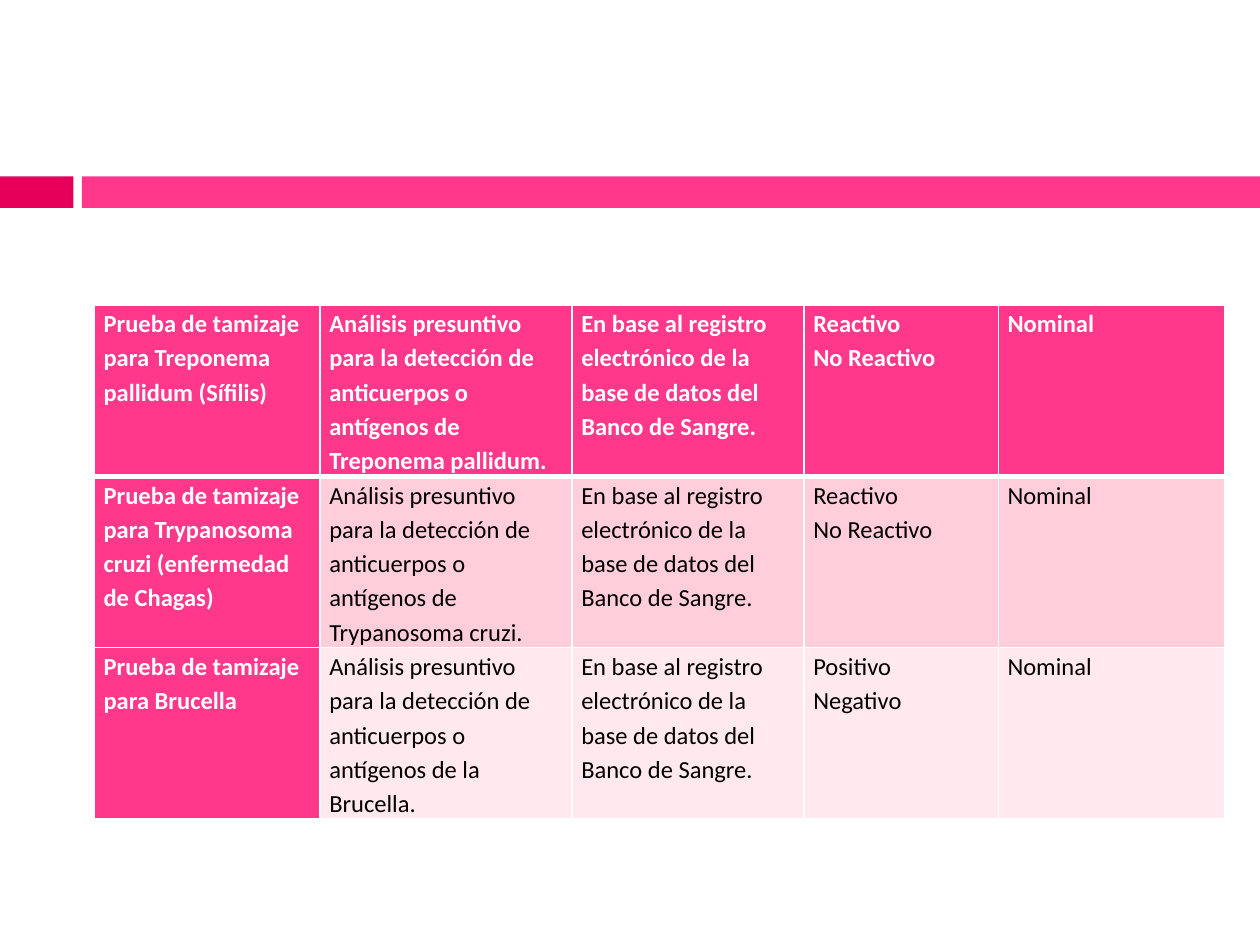
from lxml.etree import SubElement
from pptx import Presentation
from pptx.dml.color import RGBColor
from pptx.enum.shapes import MSO_SHAPE
from pptx.oxml.ns import qn
from pptx.util import Pt

CRIMSON = RGBColor(0xE4, 0x00, 0x59)
PINK = RGBColor(0xFF, 0x38, 0x8C)
PINK_MID = RGBColor(0xFF, 0xCE, 0xDA)
PINK_PALE = RGBColor(0xFF, 0xE8, 0xEE)
WHITE = RGBColor(0xFF, 0xFF, 0xFF)
BLACK = RGBColor(0x00, 0x00, 0x00)

COL_WIDTHS = [129, 144, 132.6, 111, 129.4]
ROW_HEIGHT = 82.8
BAND_FILLS = [PINK, PINK_MID, PINK_PALE]
# Test, agent as named in the analysis, possible results
TESTS = [
    ("Treponema pallidum (Sífilis)", "Treponema pallidum",
     "Reactivo\nNo Reactivo"),
    ("Trypanosoma cruzi (enfermedad de Chagas)", "Trypanosoma cruzi",
     "Reactivo\nNo Reactivo"),
    ("Brucella", "la Brucella", "Positivo\nNegativo"),
]


def add_bar(slide, left, top, width, height, color):
    sp = slide.shapes.add_shape(MSO_SHAPE.RECTANGLE, Pt(left), Pt(top),
                                Pt(width), Pt(height))
    sp.shadow.inherit = False
    sp.fill.solid()
    sp.fill.fore_color.rgb = color
    sp.line.fill.background()


def add_header_band(slide, left, top, width, height):
    tab, gap = 42, 4.8
    add_bar(slide, left, top, tab, height, CRIMSON)
    add_bar(slide, left + tab + gap, top, width - tab - gap, height, PINK)


def set_borders(cell, **widths):
    """Draw white cell borders; widths in points by side, in L, R, T, B order."""
    tc_pr = cell._tc.get_or_add_tcPr()
    for side, width in widths.items():
        ln = SubElement(tc_pr, qn(f"a:ln{side}"), w=str(Pt(width)))
        fill = SubElement(ln, qn("a:solidFill"))
        SubElement(fill, qn("a:srgbClr"), val=str(WHITE))


def fill_cell(cell, text, fill, color, bold):
    cell.fill.solid()
    cell.fill.fore_color.rgb = fill
    cell.margin_left = cell.margin_right = Pt(5.2)
    cell.margin_top = cell.margin_bottom = Pt(0)
    cell.text = text
    for p in cell.text_frame.paragraphs:
        p.line_spacing = 1.15
        p.font.name = "Calibri"
        p.font.size = Pt(14)
        p.font.bold = bold
        p.font.color.rgb = color


def add_tests_table(slide, left, top):
    table = slide.shapes.add_table(
        len(TESTS), len(COL_WIDTHS), Pt(left), Pt(top),
        Pt(sum(COL_WIDTHS)), Pt(ROW_HEIGHT * len(TESTS))).table
    for column, width in zip(table.columns, COL_WIDTHS):
        column.width = Pt(width)
    for r, (test, agent, results) in enumerate(TESTS):
        texts = [
            f"Prueba de tamizaje para {test}",
            f"Análisis presuntivo para la detección de anticuerpos o antígenos de {agent}.",
            "En base al registro electrónico de la base de datos del Banco de Sangre.",
            results,
            "Nominal",
        ]
        for c, text in enumerate(texts):
            cell = table.cell(r, c)
            set_borders(cell, L=1, R=1, T=3 if r == 1 else 1,
                        B=3 if r == 0 else 1)
            strong = r == 0 or c == 0
            fill_cell(cell, text, PINK if strong else BAND_FILLS[r],
                      WHITE if strong else BLACK, strong)


def main():
    prs = Presentation()
    prs.slide_width, prs.slide_height = Pt(720), Pt(540)
    slide = prs.slides.add_slide(prs.slide_layouts[6])
    add_header_band(slide, 0, 100.8, 720, 18)
    add_tests_table(slide, 54, 174.2)
    prs.save("out.pptx")


if __name__ == "__main__":
    main()
